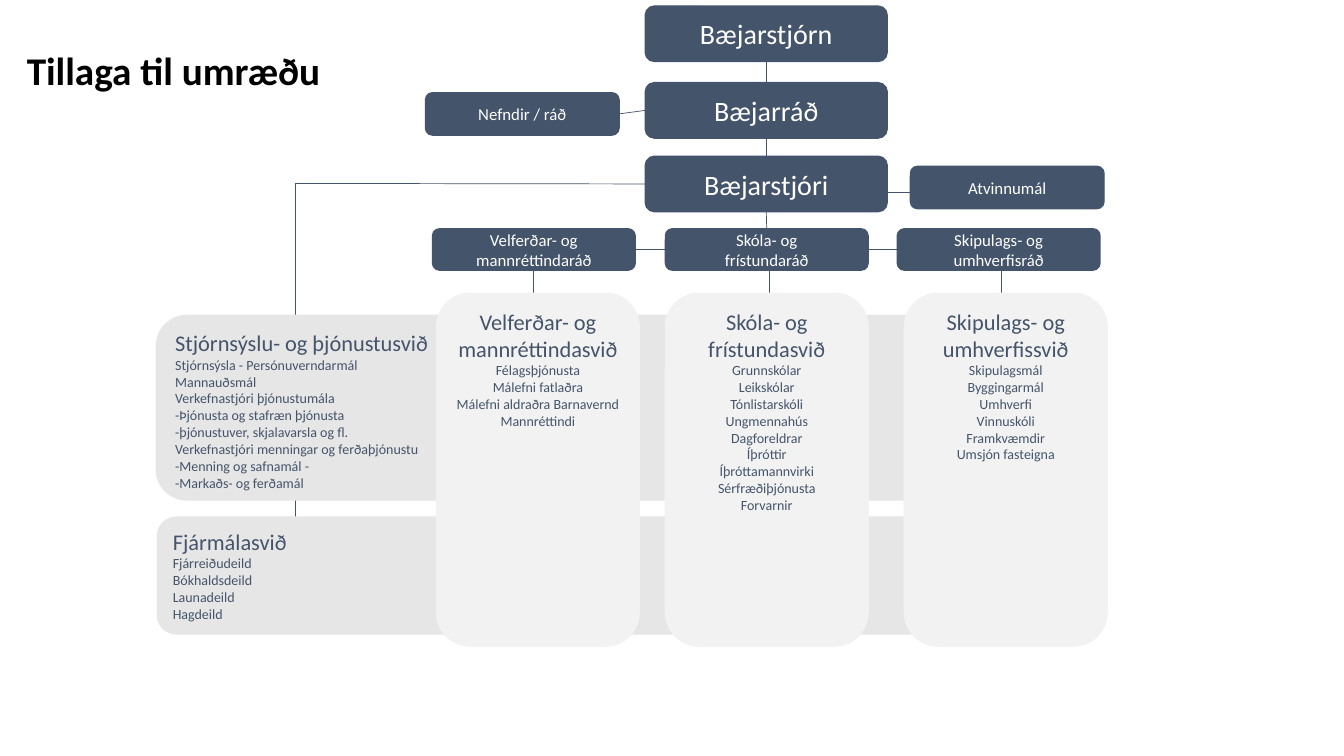
from pptx import Presentation
from pptx.dml.color import RGBColor
from pptx.enum import shapes, text
from pptx.oxml import xmlchemy as xml
from pptx.util import Inches, Pt

COLORS = {"navy": "44546A", "grey": "E7E6E6", "pale": "F2F2F2",
          "white": "FFFFFF", "black": "000000"}
TOP, LEFT, BOTTOM, RIGHT = range(4)
SIDE_X = 2.93

CHAIN = [("Bæjarstjórn", 0.06), ("Bæjarráð", 0.82), ("Bæjarstjóri", 1.55)]

# council lines, council left, department left, stem x, department name, tasks
BRANCHES = [
    (["Velferðar- og mannréttindaráð"], 4.29, 4.33, 5.29,
     "Velferðar- og mannréttindasvið",
     ["Félagsþjónusta", "Málefni fatlaðra", "Málefni aldraðra Barnavernd",
      "Mannréttindi"]),
    (["Skóla- og", "frístundaráð"], 6.6, 6.6, 7.63,
     "Skóla- og frístundasvið",
     ["Grunnskólar", "Leikskólar", "Tónlistarskóli", "Ungmennahús",
      "Dagforeldrar", "Íþróttir", "Íþróttamannvirki Sérfræðiþjónusta",
      "Forvarnir"]),
    (["Skipulags- og umhverfisráð"], 8.9, 8.97, 9.93,
     "Skipulags- og umhverfissvið",
     ["Skipulagsmál", "Byggingarmál", "Umhverfi", "Vinnuskóli",
      "Framkvæmdir", "Umsjón fasteigna"]),
]

FINANCE = ["Fjárreiðudeild", "Bókhaldsdeild", "Launadeild", "Hagdeild"]
SERVICE = ["Stjórnsýsla - Persónuverndarmál", "Mannauðsmál",
           "Verkefnastjóri þjónustumála", "-Þjónusta og stafræn þjónusta",
           "-þjónustuver, skjalavarsla og fl.",
           "Verkefnastjóri menningar og ferðaþjónustu",
           "-Menning og safnamál -", "-Markaðs- og ferðamál"]


def rgb(name):
    return RGBColor.from_string(COLORS[name])


def write(frame, lines, size=12, color="white", bold=False, center=True,
          first=None):
    """Fill a frame with one paragraph a line; first is the top line's size."""
    frame.word_wrap = True
    for i, line in enumerate(lines):
        para = frame.paragraphs[0] if i == 0 else frame.add_paragraph()
        para.alignment = (text.PP_ALIGN.CENTER if center
                          else text.PP_ALIGN.LEFT)
        run = para.add_run()
        run.text = line
        run.font.name = "Calibri"
        run.font.size = Pt(first if first and i == 0 else size)
        run.font.bold = bold
        run.font.color.rgb = rgb(color)


def block(slide, box, fill):
    shape = slide.shapes.add_shape(shapes.MSO_SHAPE.ROUNDED_RECTANGLE,
                                   *map(Inches, box))
    shape.shadow.inherit = False
    shape.fill.solid()
    shape.fill.fore_color.rgb = rgb(fill)
    shape.line.color.rgb = rgb(fill)
    shape.line.width = Pt(1)
    return shape


def unit(slide, box, lines, size=12):
    """Dark box for a body or post."""
    shape = block(slide, box, "navy")
    shape.text_frame.vertical_anchor = text.MSO_ANCHOR.MIDDLE
    write(shape.text_frame, lines, size=size)
    return shape


def panel(slide, box, name, tasks, fill, center):
    """Light box with a department's name and tasks."""
    shape = block(slide, box, fill)
    shape.text_frame.vertical_anchor = text.MSO_ANCHOR.TOP
    write(shape.text_frame, [name] + tasks, size=10, first=16, color="navy",
          center=center)


def link(slide, start=(0, 0), end=(0, 0), head=None, tail=None):
    """Thin line between points, or joined to (shape, side) at either end."""
    line = slide.shapes.add_connector(shapes.MSO_CONNECTOR.STRAIGHT,
                                      *map(Inches, (*start, *end)))
    if head:
        line.begin_connect(*head)
    if tail:
        line.end_connect(*tail)
    line.line.color.rgb = rgb("navy")
    line.line.width = Pt(0.5)
    props = line.element.spPr
    props.append(xml.OxmlElement("a:effectLst"))


def title(slide, box):
    frame = slide.shapes.add_textbox(*map(Inches, box)).text_frame
    frame.vertical_anchor = text.MSO_ANCHOR.MIDDLE
    write(frame, ["Tillaga til umræðu"], size=28, color="black", bold=True)


def staff(slide, box):
    """Two wide panels, one above the other."""
    x, y, w, h = box
    link(slide, (SIDE_X, 1.82), (SIDE_X, y + 2))
    panel(slide, (x + 0.01, y + 2, w - 0.08, 1.16), "Fjármálasvið", FINANCE,
          "grey", False)
    panel(slide, (x, y, w, h), "Stjórnsýslu- og þjónustusvið", SERVICE,
          "grey", False)


def branches(slide, y):
    """Councils in a row, each above its department; gives the councils."""
    row = []
    for lines, left, low, stem, name, tasks in BRANCHES:
        link(slide, (stem, y + 0.41), (stem, y + 0.64))
        panel(slide, (low, y + 0.64, 2.01, 3.5), name, tasks, "pale", True)
        row.append(unit(slide, (left, y, 2.01, 0.41), lines))
    for a, b in zip(row, row[1:]):
        link(slide, head=(a, RIGHT), tail=(b, LEFT))
    return row


def chain(slide, x, below):
    """Line of command with side bodies, ending at the box below."""
    posts = [unit(slide, (x, y, 2.4, 0.55), [name], 20) for name, y in CHAIN]
    for a, b in zip(posts, posts[1:] + [below]):
        link(slide, head=(a, BOTTOM), tail=(b, TOP))
    board, mayor = posts[1:]
    link(slide, end=(SIDE_X, 1.82), head=(mayor, LEFT))
    group = unit(slide, (x - 2.18, 0.92, 1.92, 0.42), ["Nefndir / ráð"])
    link(slide, head=(group, RIGHT), tail=(board, LEFT))
    unit(slide, (x + 2.63, 1.65, 1.92, 0.42), ["Atvinnumál"])
    link(slide, (x + 2.4, 1.91), (x + 2.63, 1.91))


def main():
    deck = Presentation()
    deck.slide_width, deck.slide_height = Inches(13.33), Inches(7.5)
    slide = deck.slides.add_slide(deck.slide_layouts[6])
    title(slide, (0.02, 0, 3.4, 1.38))
    staff(slide, (1.55, 3.13, 9.31, 1.83))
    row = branches(slide, 2.27)
    chain(slide, 6.4, row[1])
    deck.save("out.pptx")


if __name__ == "__main__":
    main()
